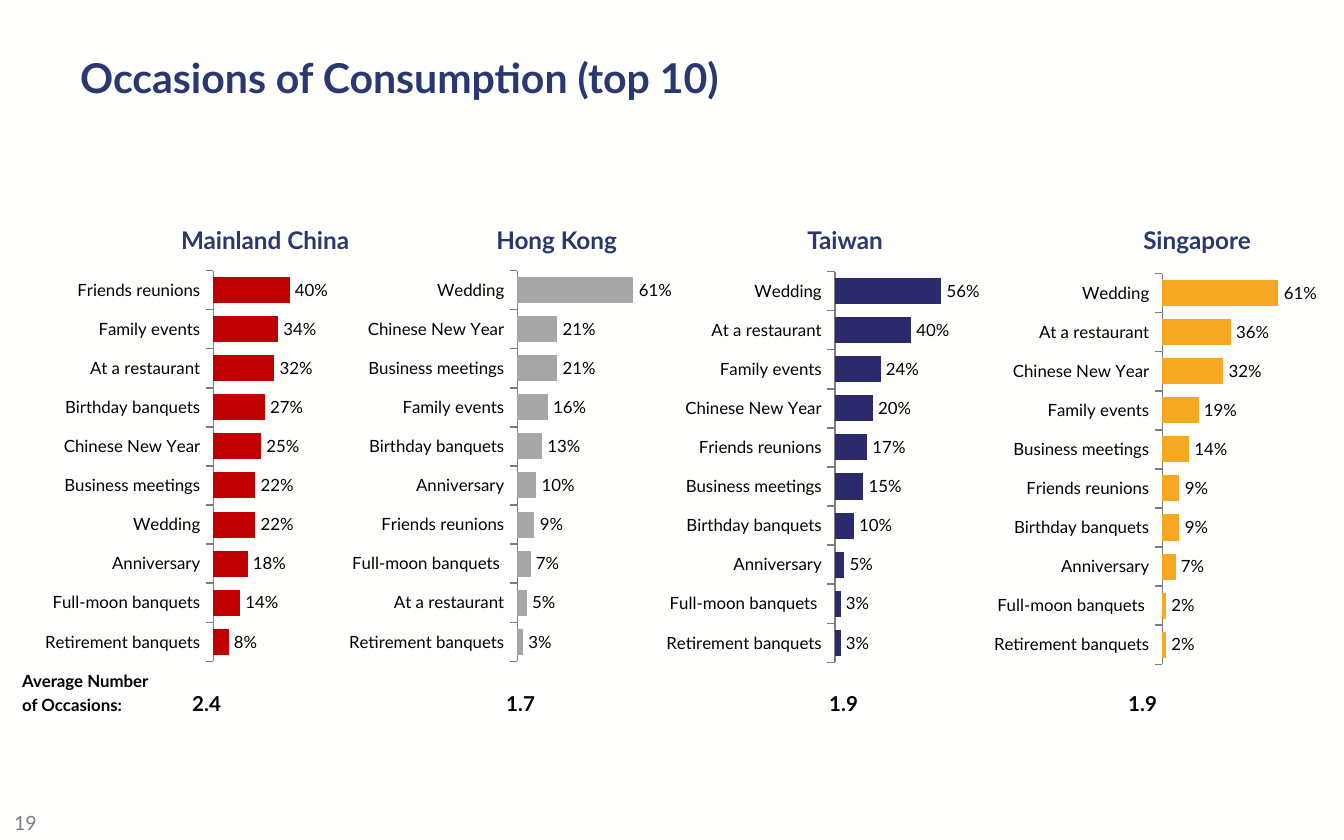
from lxml.etree import SubElement
from pptx import Presentation
from pptx.chart.data import CategoryChartData
from pptx.dml.color import RGBColor
from pptx.enum.chart import XL_CHART_TYPE, XL_LABEL_POSITION, XL_TICK_MARK
from pptx.enum.text import MSO_ANCHOR, PP_ALIGN
from pptx.oxml.ns import qn
from pptx.util import Inches, Pt

PX = Inches(10) / 1344
FONT = "Lato"
PAPER = RGBColor(0xFF, 0xFF, 0xFE)
BLACK = RGBColor(0, 0, 0)
NAVY = RGBColor(0x29, 0x38, 0x70)
GREY = RGBColor(0x7D, 0x7D, 0x7D)
RED = RGBColor(0xC0, 0, 0)
SILVER = RGBColor(0xA7, 0xA7, 0xA7)
INDIGO = RGBColor(0x2C, 0x29, 0x6D)
AMBER = RGBColor(0xF7, 0xA8, 0x23)

REGIONS = [
    ("Mainland China", (124, 282), (44, 270), (0.494, 0.002), RED, [
        ("Friends reunions", 40), ("Family events", 34),
        ("At a restaurant", 32), ("Birthday banquets", 27),
        ("Chinese New Year", 25), ("Business meetings", 22),
        ("Wedding", 22), ("Anniversary", 18),
        ("Full-moon banquets", 14), ("Retirement banquets", 8)]),
    ("Hong Kong", (437, 239), (348, 270), (0.494, 0.002), SILVER, [
        ("Wedding", 61), ("Chinese New Year", 21),
        ("Business meetings", 21), ("Family events", 16),
        ("Birthday banquets", 13), ("Anniversary", 10),
        ("Friends reunions", 9), ("Full-moon banquets ", 7),
        ("At a restaurant", 5), ("Retirement banquets", 3)]),
    ("Taiwan", (739, 212), (659, 271), (0.513, 0.011), INDIGO, [
        ("Wedding", 56), ("At a restaurant", 40),
        ("Family events", 24), ("Chinese New Year", 20),
        ("Friends reunions", 17), ("Business meetings", 15),
        ("Birthday banquets", 10), ("Anniversary", 5),
        ("Full-moon banquets ", 3), ("Retirement banquets", 3)]),
    ("Singapore", (1117, 160), (993, 273), (0.494, 0.002), AMBER, [
        ("Wedding", 61), ("At a restaurant", 36),
        ("Chinese New Year", 32), ("Family events", 19),
        ("Business meetings", 14), ("Friends reunions", 9),
        ("Birthday banquets", 9), ("Anniversary", 7),
        ("Full-moon banquets ", 2), ("Retirement banquets", 2)]),
]
MEANS = [("2.4", 170), ("1.7", 484), ("1.9", 807), ("1.9", 1106)]


def px(n):
    return round(n * PX)


def style(font, size, color, bold=False):
    font.name = FONT
    font.size = Pt(size)
    font.bold = bold
    font.color.rgb = color


def add_box(slide, *area):
    frame = slide.shapes.add_textbox(*map(px, area)).text_frame
    frame.word_wrap = True
    return frame


def add_label(slide, area, text, size, color, bold=True,
              align=PP_ALIGN.LEFT, anchor=MSO_ANCHOR.MIDDLE):
    frame = add_box(slide, *area)
    frame.vertical_anchor = anchor
    para = frame.paragraphs[0]
    para.text = text
    para.alignment = align
    style(para.font, size, color, bold)


def place_plot(chart, left, top):
    area = chart._chartSpace.chart.plotArea
    layout = area.find(qn("c:layout"))
    if layout is None:
        layout = area.makeelement(qn("c:layout"))
        area.insert(0, layout)
    manual = SubElement(layout, qn("c:manualLayout"))
    for tag, value in (("layoutTarget", "inner"), ("xMode", "edge"),
                       ("yMode", "edge"), ("x", left), ("y", top),
                       ("w", 0.444), ("h", 1)):
        SubElement(manual, qn(f"c:{tag}")).set("val", str(value))


def add_bars(slide, spot, plot_at, color, rows):
    data = CategoryChartData(number_format="0%")
    data.categories = [name for name, _ in rows]
    data.add_series("Series 1", [share / 100 for _, share in rows])
    left, top = spot
    chart = slide.shapes.add_chart(
        XL_CHART_TYPE.BAR_CLUSTERED, px(left), px(top), px(343), px(392),
        data).chart
    style(chart.font, 10, BLACK)
    chart.has_legend = False
    chart.has_title = False
    place_plot(chart, *plot_at)

    names = chart.category_axis
    names.reverse_order = True
    names.has_major_gridlines = False
    names.major_tick_mark = XL_TICK_MARK.OUTSIDE
    names.format.line.color.rgb = GREY
    names.format.line.width = Pt(0.75)
    style(names.tick_labels.font, 9, BLACK)

    scale = chart.value_axis
    scale.minimum_scale = 0
    scale.maximum_scale = 0.8
    scale.has_major_gridlines = False
    scale.visible = False

    plot = chart.plots[0]
    plot.gap_width = 50
    plot.vary_by_categories = False
    fill = plot.series[0].format.fill
    fill.solid()
    fill.fore_color.rgb = color
    plot.has_data_labels = True
    labels = plot.data_labels
    labels.show_value = True
    labels.position = XL_LABEL_POSITION.OUTSIDE_END
    labels.number_format = "0%"
    labels.number_format_is_linked = False
    style(labels.font, 9, BLACK)


def add_means(slide):
    frame = add_box(slide, 9, 664, 1289, 59)
    head = frame.paragraphs[0]
    head.text = "Average Number"
    style(head.font, 9, BLACK, True)

    para = frame.add_paragraph()
    stops = SubElement(para._p.get_or_add_pPr(), qn("a:tabLst"))
    for _, stop in MEANS:
        tab = SubElement(stops, qn("a:tab"))
        tab.set("pos", str(px(stop)))
        tab.set("algn", "l")
    style(para.font, 11, BLACK, True)
    lead = para.add_run()
    lead.text = "of Occasions:"
    lead.font.size = Pt(9)
    para.add_run().text = "".join("\t" + mean for mean, _ in MEANS)


def main():
    deck = Presentation()
    deck.slide_width = px(1344)
    deck.slide_height = px(840)
    slide = deck.slides.add_slide(deck.slide_layouts[6])
    back = slide.background.fill
    back.solid()
    back.fore_color.rgb = PAPER

    add_label(slide, (1, 804, 63, 38), "19", 10.5, GREY, False,
              anchor=MSO_ANCHOR.TOP)
    add_label(slide, (67, 7, 1210, 140), "Occasions of Consumption (top 10)",
              22, NAVY)
    for name, (left, width), spot, plot_at, color, rows in REGIONS:
        add_bars(slide, spot, plot_at, color, rows)
        add_label(slide, (left, 218, width, 43), name, 13, NAVY,
                  align=PP_ALIGN.CENTER)
    add_means(slide)
    deck.save("out.pptx")


if __name__ == "__main__":
    main()
